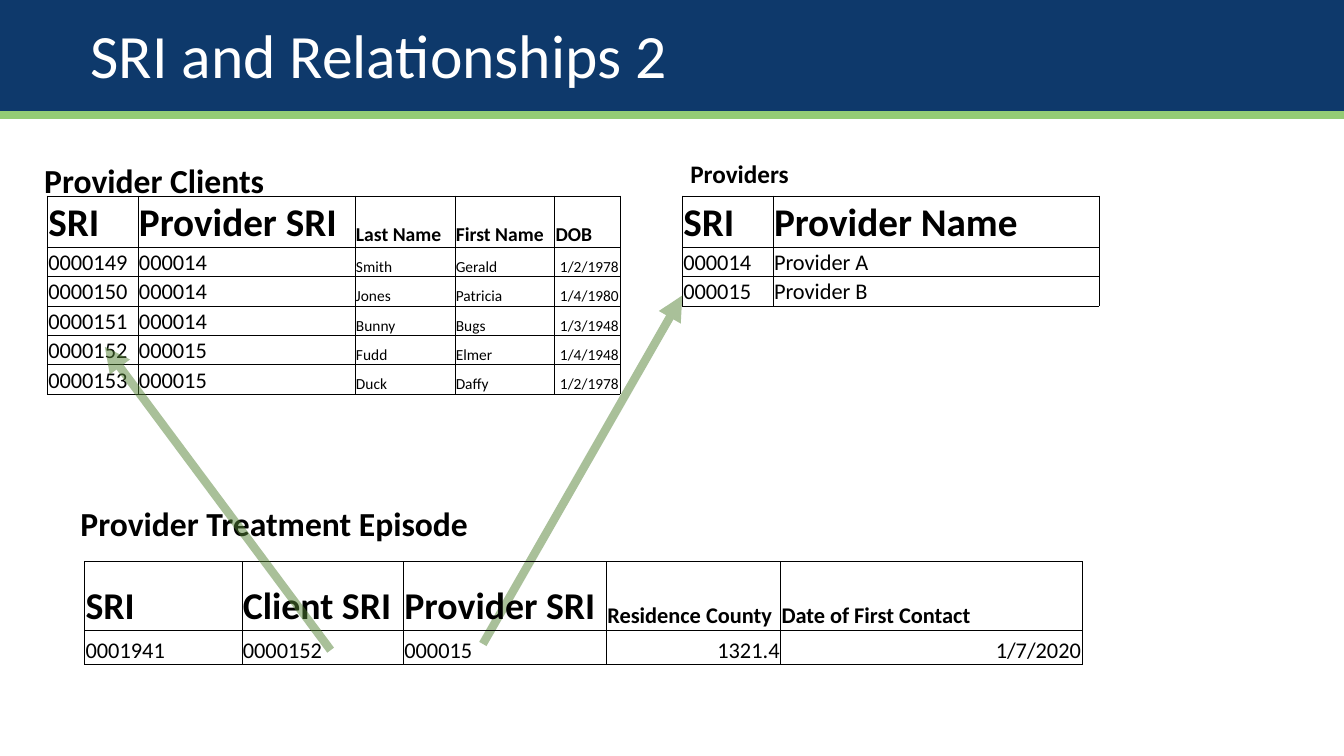
from dataclasses import dataclass

import pptx
import pptx.dml.color
import pptx.enum.dml
import pptx.enum.shapes
import pptx.enum.text
import pptx.oxml
import pptx.oxml.ns
import pptx.presentation
import pptx.shapes.autoshape
import pptx.slide
import pptx.table
import pptx.text.text
import pptx.util

Pt = pptx.util.Pt
FONT = "Calibri"
BLACK, WHITE, NAVY, LIME, GREEN = "000000", "FFFFFF", "0E396B", "94CC75", "548235"
SLIDE_WIDTH, SLIDE_HEIGHT = 960, 540


@dataclass(frozen=True)
class Column:
    heading: str
    width: float
    heading_size: float
    body_size: float
    right: bool = False


@dataclass(frozen=True)
class Entity:
    """A captioned database table and its records."""
    caption: str
    caption_box: tuple[float, float, float, float]
    caption_size: float
    left: float
    top: float
    heading_height: float
    row_height: float
    columns: list[Column]
    records: list[tuple[str, ...]]


@dataclass(frozen=True)
class KeyArrow:
    start: tuple[float, float]
    end: tuple[float, float]


CLIENTS = Entity(
    "Provider Clients", (24.5, 110.9, 173.5, 36), 24, 33.8, 139.9, 36.7, 21,
    [
        Column("SRI", 64.8, 28, 16),
        Column("Provider SRI", 155, 28, 16),
        Column("Last Name", 71.3, 14, 11),
        Column("First Name", 71.3, 14, 11),
        Column("DOB", 46.6, 14, 11, right=True),
    ],
    [
        ("0000149", "000014", "Smith", "Gerald", "1/2/1978"),
        ("0000150", "000014", "Jones", "Patricia", "1/4/1980"),
        ("0000151", "000014", "Bunny", "Bugs", "1/3/1948"),
        ("0000152", "000015", "Fudd", "Elmer", "1/4/1948"),
        ("0000153", "000015", "Duck", "Daffy", "1/2/1978"),
    ],
)
PROVIDERS = Entity(
    "Providers", (486, 109.4, 85.7, 28.8), 18, 487.4, 139.9, 36.7, 21,
    [Column("SRI", 64.8, 28, 16), Column("Provider Name", 232.9, 28, 16)],
    [("000014", "Provider A"), ("000015", "Provider B")],
)
EPISODES = Entity(
    "Provider Treatment Episode", (50.4, 355.7, 294.5, 36), 24, 60.5, 401, 49, 24.5,
    [
        Column("SRI", 112.3, 27, 16),
        Column("Client SRI", 115.4, 27, 16),
        Column("Provider SRI", 145, 27, 16),
        Column("Residence County", 124.4, 16, 16, right=True),
        Column("Date of First Contact", 215.3, 16, 16, right=True),
    ],
    [("0001941", "0000152", "000015", "1321.4", "1/7/2020")],
)
TO_PROVIDER = KeyArrow((344.9, 460), (487.4, 211))
TO_CLIENT = KeyArrow((236.2, 464.4), (74.9, 247.7))


def rgb(value: str) -> pptx.dml.color.RGBColor:
    return pptx.dml.color.RGBColor.from_string(value)


def style(paragraph: pptx.text.text._Paragraph, size: float, color: str, bold: bool) -> None:
    for run in paragraph.runs:
        run.font.name = FONT
        run.font.size = Pt(size)
        run.font.bold = bold
        run.font.color.rgb = rgb(color)


def add_band(slide: pptx.slide.Slide, top: float, height: float, color: str) -> None:
    band = slide.shapes.add_shape(
        pptx.enum.shapes.MSO_SHAPE.RECTANGLE, 0, Pt(top), Pt(SLIDE_WIDTH), Pt(height))
    band.shadow.inherit = False
    band.fill.solid()
    band.fill.fore_color.rgb = rgb(color)
    band.line.fill.background()


def add_text(slide: pptx.slide.Slide, text: str, box: tuple[float, float, float, float],
             size: float, color: str, bold: bool) -> pptx.shapes.autoshape.Shape:
    label = slide.shapes.add_textbox(*(Pt(length) for length in box))
    label.text_frame.text = text
    label.text_frame.word_wrap = False
    style(label.text_frame.paragraphs[0], size, color, bold)
    return label


def add_borders(cell: pptx.table._Cell) -> None:
    properties = cell._tc.get_or_add_tcPr()
    for side in ("lnL", "lnR", "lnT", "lnB"):
        properties.append(pptx.oxml.parse_xml(
            f'<a:{side} {pptx.oxml.ns.nsdecls("a")} w="{Pt(0.5)}"><a:solidFill>'
            f'<a:srgbClr val="{BLACK}"/></a:solidFill><a:prstDash val="solid"/></a:{side}>'))


def fill_cell(cell: pptx.table._Cell, text: str, size: float, bold: bool, right: bool) -> None:
    add_borders(cell)
    cell.fill.background()
    cell.margin_left = cell.margin_right = cell.margin_top = Pt(0.7)
    cell.margin_bottom = 0
    cell.vertical_anchor = pptx.enum.text.MSO_ANCHOR.BOTTOM
    cell.text_frame.text = text
    paragraph = cell.text_frame.paragraphs[0]
    if right:
        paragraph.alignment = pptx.enum.text.PP_ALIGN.RIGHT
    style(paragraph, size, BLACK, bold)


def add_entity(slide: pptx.slide.Slide, entity: Entity) -> None:
    width = sum(column.width for column in entity.columns)
    height = entity.heading_height + entity.row_height * len(entity.records)
    grid = slide.shapes.add_table(
        len(entity.records) + 1, len(entity.columns),
        Pt(entity.left), Pt(entity.top), Pt(width), Pt(height)).table
    grid.first_row = grid.horz_banding = False
    for row in grid.rows:
        row.height = Pt(entity.row_height)
    grid.rows[0].height = Pt(entity.heading_height)
    for c, column in enumerate(entity.columns):
        grid.columns[c].width = Pt(column.width)
        fill_cell(grid.cell(0, c), column.heading, column.heading_size, True, False)
        for r, record in enumerate(entity.records, start=1):
            fill_cell(grid.cell(r, c), record[c], column.body_size, False, column.right)
    caption = add_text(slide, entity.caption, entity.caption_box, entity.caption_size, BLACK, True)
    caption.text_frame.auto_size = pptx.enum.text.MSO_AUTO_SIZE.SHAPE_TO_FIT_TEXT


def add_key_arrow(slide: pptx.slide.Slide, arrow: KeyArrow) -> None:
    """Draw a half-transparent arrow from a foreign key to the record it refers to."""
    link = slide.shapes.add_connector(
        pptx.enum.shapes.MSO_CONNECTOR.STRAIGHT,
        *(Pt(length) for length in arrow.start + arrow.end))
    link.line.width = Pt(6)
    link.line.color.rgb = rgb(GREEN)
    namespace = pptx.oxml.ns.nsdecls("a")
    line = link.line._get_or_add_ln()
    line.find(".//" + pptx.oxml.ns.qn("a:srgbClr")).append(
        pptx.oxml.parse_xml(f'<a:alpha {namespace} val="50000"/>'))
    line.append(pptx.oxml.parse_xml(f'<a:tailEnd {namespace} type="triangle"/>'))
    link._element.spPr.append(pptx.oxml.parse_xml(f"<a:effectLst {namespace}/>"))


def main() -> None:
    deck = pptx.Presentation()
    deck.slide_width, deck.slide_height = Pt(SLIDE_WIDTH), Pt(SLIDE_HEIGHT)
    slide = deck.slides.add_slide(deck.slide_layouts[6])
    add_band(slide, 6.5, 78.5, LIME)
    add_band(slide, 0, 79.2, NAVY)
    title = add_text(slide, "SRI and Relationships 2", (57.6, 14.4, 846.7, 76.3), 44, WHITE, False)
    title.text_frame.word_wrap = True
    title.text_frame.paragraphs[0].line_spacing = 0.9
    add_entity(slide, CLIENTS)
    add_entity(slide, PROVIDERS)
    add_key_arrow(slide, TO_PROVIDER)
    add_entity(slide, EPISODES)
    add_key_arrow(slide, TO_CLIENT)
    deck.save("out.pptx")


if __name__ == "__main__":
    main()
